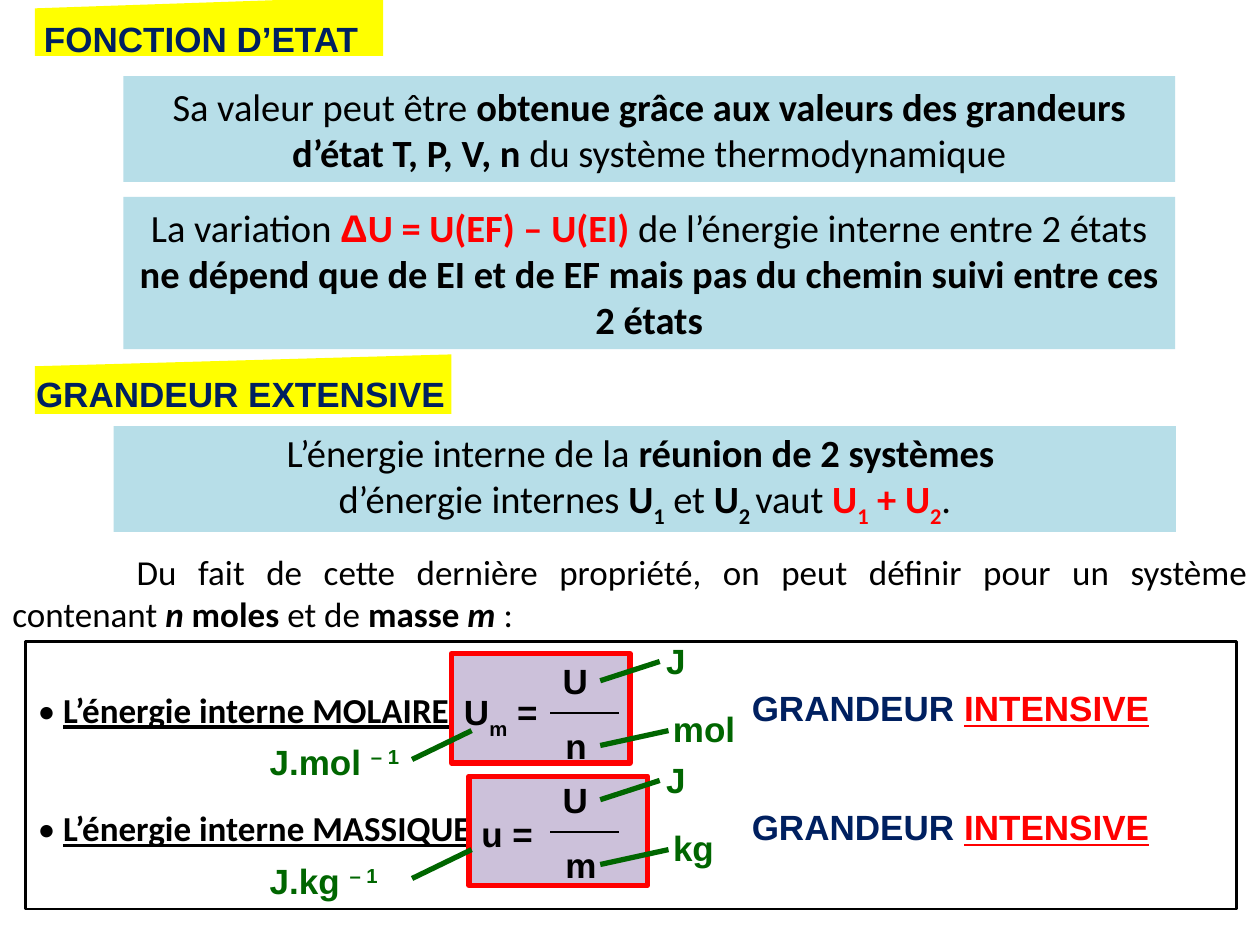
from lxml import etree
from pptx import Presentation
from pptx.dml.color import RGBColor
from pptx.enum.shapes import MSO_CONNECTOR, MSO_SHAPE
from pptx.enum.text import MSO_ANCHOR, MSO_AUTO_SIZE, PP_ALIGN
from pptx.oxml.ns import qn
from pptx.util import Pt

RECT, TAG = MSO_SHAPE.RECTANGLE, MSO_SHAPE.FLOWCHART_MANUAL_INPUT
LINE = MSO_CONNECTOR.STRAIGHT
TOP, MID = MSO_ANCHOR.TOP, MSO_ANCHOR.MIDDLE
GROW, FIXED = MSO_AUTO_SIZE.SHAPE_TO_FIT_TEXT, MSO_AUTO_SIZE.NONE
LEFT, MIDDLE, JUST = PP_ALIGN.LEFT, PP_ALIGN.CENTER, PP_ALIGN.JUSTIFY

THEME = {
    "ink": "000000", "paper": "FFFFFF", "navy": "002060", "red": "FF0000",
    "green": "006600", "yellow": "FFFF00", "sky": "B7DEE8", "lilac": "CCC1DA",
    "body": "Calibri", "label": "Arial", "large": 22, "text": 20,
}
MARKS = {"b": {"bold": True}, "i": {"italic": True}, "u": {"underline": True},
         "a": {"name": THEME["label"]}}
SHIFT = {"-": "-30000", "+": "30000"}

HEADS = [
    ("FONCTION D’ETAT", (20, -2, 199, 34), (18, 6.5, 242, 31.5)),
    ("GRANDEUR EXTENSIVE", (20, 202.5, 238, 34), (13.5, 209.5, 278, 31.5)),
]
FACTS = [
    ((70.5, 43.5, 601, 60.5), [[
        ("Sa valeur peut être ", ""),
        ("obtenue grâce aux valeurs des grandeurs d’état T, P, V, n ", "b"),
        ("du système thermodynamique", "")]]),
    ((70.5, 112.5, 601, 87), [[
        ("La variation ", ""), ("Δ", "bra"), ("U = U(EF) – U(EI) ", "br"),
        ("de l’énergie interne entre 2 états ", ""),
        ("ne dépend que de EI et de EF mais pas du chemin suivi "
         "entre ces 2 états", "b")]]),
    ((65, 243.5, 607, 60.5), [
        [("L’énergie interne de la ", ""), ("réunion de 2 systèmes ", "b")],
        [("d’énergie internes ", ""), ("U", "b"), ("1", "b-"), (" et ", ""),
         ("U", "b"), ("2 ", "b-"), ("vaut ", ""), ("U", "br"), ("1", "br-"),
         (" + U", "br"), ("2", "br-"), (".", "")]]),
]
INTRO = [[
    ("Du fait de cette dernière propriété, on peut définir pour un système "
     "contenant ", ""), ("n", "bi"), (" moles", "b"), (" et de ", ""),
    ("masse ", "b"), ("m ", "bi"), (":", "")]]
NAMES = ["L’énergie interne MOLAIRE", "L’énergie interne MASSIQUE"]
ROWS = [
    {"box": 258, "lhs": [("U", "b"), ("m", "b-"), (" =", "b")],
     "wide": 68, "low": ("n", 27), "per": ("mol", 50), "unit": ("J.mol ", 91.5)},
    {"box": 268, "lhs": [("u =", "b")],
     "wide": 47, "low": ("m", 32), "per": ("kg", 38), "unit": ("J.kg ", 79)},
]
KIND = [[("GRANDEUR ", "b"), ("INTENSIVE", "bur")]]
LINKS = [(343, 389, 377, 378), (382, 417.5, 343, 426), (235.5, 434, 269.5, 417.5)]
PITCH, STEP = 68, 70


def tint(key):
    return RGBColor.from_string(THEME[key])


def write(shape, paras, font="label", size="text", color="ink", align=LEFT,
          anchor=TOP, wrap=True, fit=GROW, gap=0, indent=0):
    frame = shape.text_frame
    form = {"word_wrap": wrap, "auto_size": fit, "vertical_anchor": anchor}
    for key, val in form.items():
        setattr(frame, key, val)
    for num, runs in enumerate(paras):
        para = frame.add_paragraph() if num else frame.paragraphs[0]
        para.alignment = align
        if num and gap:
            para.space_before = Pt(gap)
        if indent:
            para._p.get_or_add_pPr().set("indent", str(Pt(indent)))
        for text, marks in runs:
            run = para.add_run()
            run.text = text
            form = {"name": THEME[font], "size": Pt(THEME[size]), "bold": False}
            for mark in marks:
                form.update(MARKS.get(mark, {}))
                if mark in SHIFT:
                    run._r.get_or_add_rPr().set("baseline", SHIFT[mark])
            for key, val in form.items():
                setattr(run.font, key, val)
            run.font.color.rgb = tint("red" if "r" in marks else color)


def block(home, kind, area, fill, edge=None, width=0):
    shape = home.add_shape(kind, *map(Pt, area))
    shape.shadow.inherit = False
    shape.fill.solid()
    shape.fill.fore_color.rgb = tint(fill)
    if edge:
        shape.line.color.rgb = tint(edge)
        shape.line.width = Pt(width)
    else:
        shape.line.fill.background()
    return shape


def label(home, area, paras, **form):
    write(home.add_textbox(*map(Pt, area)), paras, **form)


def stroke(home, ends, color, width):
    line = home.add_connector(LINE, *map(Pt, ends))
    line.line.color.rgb = tint(color)
    line.line.width = Pt(width)
    etree.SubElement(line._element.spPr, qn("a:effectLst"))


def draw_row(home, num, row):
    drop, x, y = num * PITCH, row["box"], 373.5 + num * STEP
    group = home.add_group_shape().shapes
    block(group, RECT, (x, y, 102, 62.5), "lilac", "red", 3)
    label(group, (x, y + 17.5, row["wide"], 31.5), [row["lhs"]])
    label(group, (314.5, 373.5 + drop, 30, 31.5), [[("U", "b")]], wrap=False)
    stroke(group, (314.5, 407.5 + drop, 354, 407.5 + drop), "ink", 1.5)
    low, wide = row["low"]
    label(group, (316, 410.5 + drop, wide, 31.5), [[(low, "b")]], wrap=False)

    for x1, y1, x2, y2 in LINKS:
        stroke(home, (x1, y1 + drop, x2, y2 + drop), "green", 3)
    per, wide = row["per"]
    unit, span = row["unit"]
    notes = [((373.5, 362), 26, [("J", "b")]),
             ((377.5, 400.5), wide, [(per, "b")]),
             ((147, 419.5), span, [(unit, "b"), ("– 1", "b+")])]
    for (x, y), wide, runs in notes:
        label(home, (x, y + drop, wide, 31.5), [runs], color="green", wrap=False)
    label(home, (422.5, 389 + drop, 278, 31.5), KIND, color="navy")


def main():
    deck = Presentation()
    deck.slide_width, deck.slide_height = Pt(720), Pt(540)
    home = deck.slides.add_slide(deck.slide_layouts[6]).shapes
    for text, tag, area in HEADS:
        block(home, TAG, tag, "yellow")
        label(home, area, [[(text, "b")]], color="navy")
    for area, paras in FACTS:
        write(block(home, RECT, area, "sky"), paras, font="body", size="large",
              align=MIDDLE, anchor=MID)
    label(home, (0, 311, 720, 55.5), INTRO, font="body", align=JUST,
          anchor=MID, indent=71)
    panel = block(home, RECT, (14.5, 366.5, 692, 153), "paper", "ink", 1.5)
    panel.text_frame.margin_top = Pt(27)
    items = [[("• ", ""), (name, "bu"), (" :", "")] for name in NAMES]
    write(panel, items, font="body", align=JUST, fit=FIXED, gap=43.5)
    for num, row in enumerate(ROWS):
        draw_row(home, num, row)
    deck.save("out.pptx")


if __name__ == "__main__":
    main()
